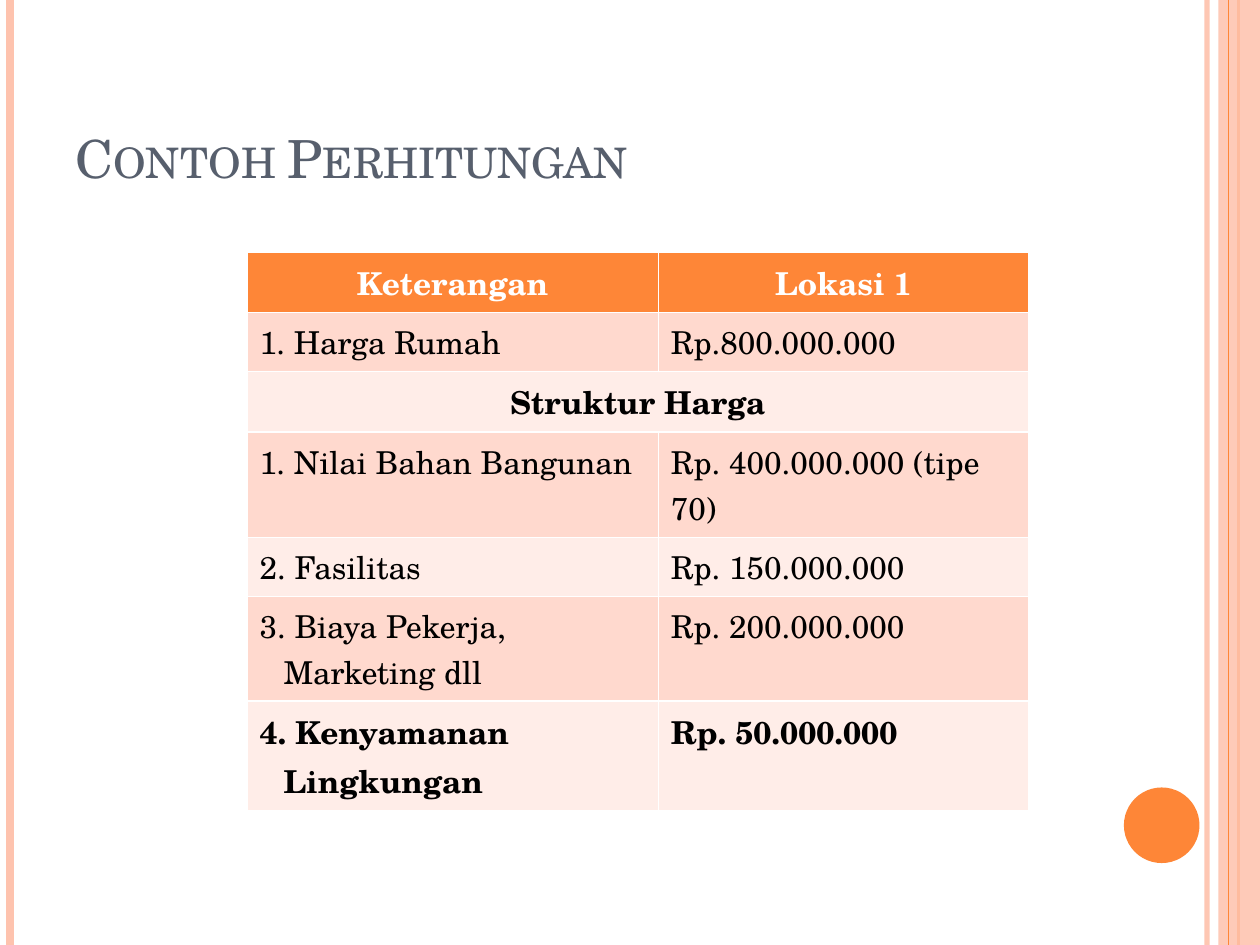
from lxml import etree
from pptx import Presentation
from pptx import util as u
from pptx.dml.color import RGBColor
from pptx.enum import shapes, text
from pptx.oxml import ns

ORANGE = RGBColor(0xFE, 0x86, 0x37)
PEACH = RGBColor(0xFE, 0xC3, 0xAE)
SLATE = RGBColor(0x57, 0x5F, 0x6D)
DARK_BAND = RGBColor(0xFF, 0xD9, 0xCE)
LIGHT_BAND = RGBColor(0xFF, 0xED, 0xE8)
WHITE = RGBColor(0xFF, 0xFF, 0xFF)
BLACK = RGBColor(0, 0, 0)
FONT = "TeX Gyre Schola"
COLUMNS, ROWS = 100, 75
HANG = 0.19

PRICES = [
    ("Keterangan", "Lokasi 1"),
    ("1. Harga Rumah", "Rp.800.000.000"),
    ("Struktur Harga",),
    ("1. Nilai Bahan Bangunan", "Rp. 400.000.000 (tipe 70)"),
    ("2. Fasilitas", "Rp. 150.000.000"),
    ("3. Biaya Pekerja, Marketing dll", "Rp. 200.000.000"),
    ("4. Kenyamanan Lingkungan", "Rp. 50.000.000"),
]
HEIGHTS = (4.8, 4.7, 4.8, 8.35, 4.7, 8.3, 8.7)
BOLD_ROWS = {0, 2, 6}
FIRST_COST_ROW = 3


def write(frame, words, size=18, color=BLACK, bold=False, centered=False, hang=0, small_caps=False):
    """Put one formatted paragraph into a text frame."""
    paragraph = frame.paragraphs[0]
    paragraph.alignment = text.PP_ALIGN.CENTER if centered else text.PP_ALIGN.LEFT
    if hang:
        properties = paragraph._p.get_or_add_pPr()
        properties.set("marL", str(u.Inches(hang)))
        properties.set("indent", str(-u.Inches(hang)))
    run = paragraph.add_run()
    run.text = words
    run.font.name, run.font.size, run.font.bold = FONT, u.Pt(size), bold
    run.font.color.rgb = color
    if small_caps:
        run._r.get_or_add_rPr().set("cap", "small")


def set_alpha(fill_parent, percent):
    """Make the first solid colour inside an element partly transparent."""
    color = fill_parent.find(".//" + ns.qn("a:srgbClr"))
    etree.SubElement(color, ns.qn("a:alpha"), val=str(percent * 1000))


def outline_cell(cell, color, points):
    """Draw a thin border on all four sides of a table cell."""
    properties = cell._tc.get_or_add_tcPr()
    for place, side in enumerate(("lnL", "lnR", "lnT", "lnB")):
        border = etree.Element(ns.qn(f"a:{side}"), w=str(u.Pt(points)))
        fill = etree.SubElement(border, ns.qn("a:solidFill"))
        etree.SubElement(fill, ns.qn("a:srgbClr"), val=str(color))
        properties.insert(place, border)


class Page:
    """Hold the slide and place elements on a grid of columns and rows."""

    def __init__(self, deck):
        self.slide = deck.slides.add_slide(deck.slide_layouts[6])
        self.column = deck.slide_width / COLUMNS
        self.row = deck.slide_height / ROWS

    def box(self, left, top, width, height):
        """Turn grid units into slide lengths."""
        return (round(left * self.column), round(top * self.row),
                round(width * self.column), round(height * self.row))

    def stripe(self, column, color, points, alpha=100):
        """Draw a vertical line over the full height."""
        x, top, _, bottom = self.box(column, 0, 0, ROWS)
        line = self.slide.shapes.add_connector(shapes.MSO_CONNECTOR.STRAIGHT, x, top, x, bottom)
        line.line.color.rgb, line.line.width = color, u.Pt(points)
        properties = line._element.spPr
        if alpha < 100:
            set_alpha(properties, alpha)
        etree.SubElement(properties, ns.qn("a:effectLst"))

    def block(self, kind, area, color, alpha=100):
        """Draw a filled shape without an outline."""
        shape = self.slide.shapes.add_shape(kind, *self.box(*area))
        shape.shadow.inherit = False
        shape.fill.solid()
        shape.fill.fore_color.rgb = color
        shape.line.fill.background()
        if alpha < 100:
            set_alpha(shape._element.spPr, alpha)

    def title(self, area, words):
        """Write the heading at the foot of its area."""
        frame = self.slide.shapes.add_textbox(*self.box(*area)).text_frame
        frame.word_wrap = True
        frame.vertical_anchor = text.MSO_ANCHOR.BOTTOM
        write(frame, words, size=30, color=SLATE, small_caps=True)

    def price_table(self, left, top, widths, heights):
        """Build the banded price table, merging rows that hold one entry."""
        area = self.box(left, top, sum(widths), sum(heights))
        table = self.slide.shapes.add_table(len(PRICES), len(widths), *area).table
        for column, width in zip(table.columns, widths):
            column.width = round(width * self.column)
        for row, height in zip(table.rows, heights):
            row.height = round(height * self.row)
        for number, entries in enumerate(PRICES):
            header, heading = number == 0, len(entries) == 1
            band = ORANGE if header else DARK_BAND if number % 2 else LIGHT_BAND
            for place in range(len(widths)):
                cell = table.cell(number, place)
                cell.fill.solid()
                cell.fill.fore_color.rgb = band
                outline_cell(cell, WHITE, 1)
            if heading:
                table.cell(number, 0).merge(table.cell(number, len(widths) - 1))
            for place, words in enumerate(entries):
                write(table.cell(number, place).text_frame, words,
                      color=WHITE if header else BLACK,
                      bold=number in BOLD_ROWS,
                      centered=header or heading,
                      hang=HANG if place == 0 and number >= FIRST_COST_ROW else 0)


def main():
    """Build the slide and save it."""
    deck = Presentation()
    deck.slide_width, deck.slide_height = u.Inches(10), u.Inches(7.5)
    page = Page(deck)
    page.stripe(95.8, PEACH, 3, alpha=93)
    page.stripe(0.8, PEACH, 4.5)
    page.stripe(98.3, ORANGE, 1.5)
    page.block(shapes.MSO_SHAPE.RECTANGLE, (96.7, 0, 3.3, ROWS), PEACH, alpha=87)
    page.stripe(97.5, ORANGE, 0.75)
    page.block(shapes.MSO_SHAPE.OVAL, (89.2, 62.5, 6, 6), ORANGE)
    page.title((5, 3, 81.7, 12.5), "Contoh Perhitungan")
    page.price_table(19.6, 20, (32.65, 29.4), HEIGHTS)
    deck.save("out.pptx")


if __name__ == "__main__":
    main()
